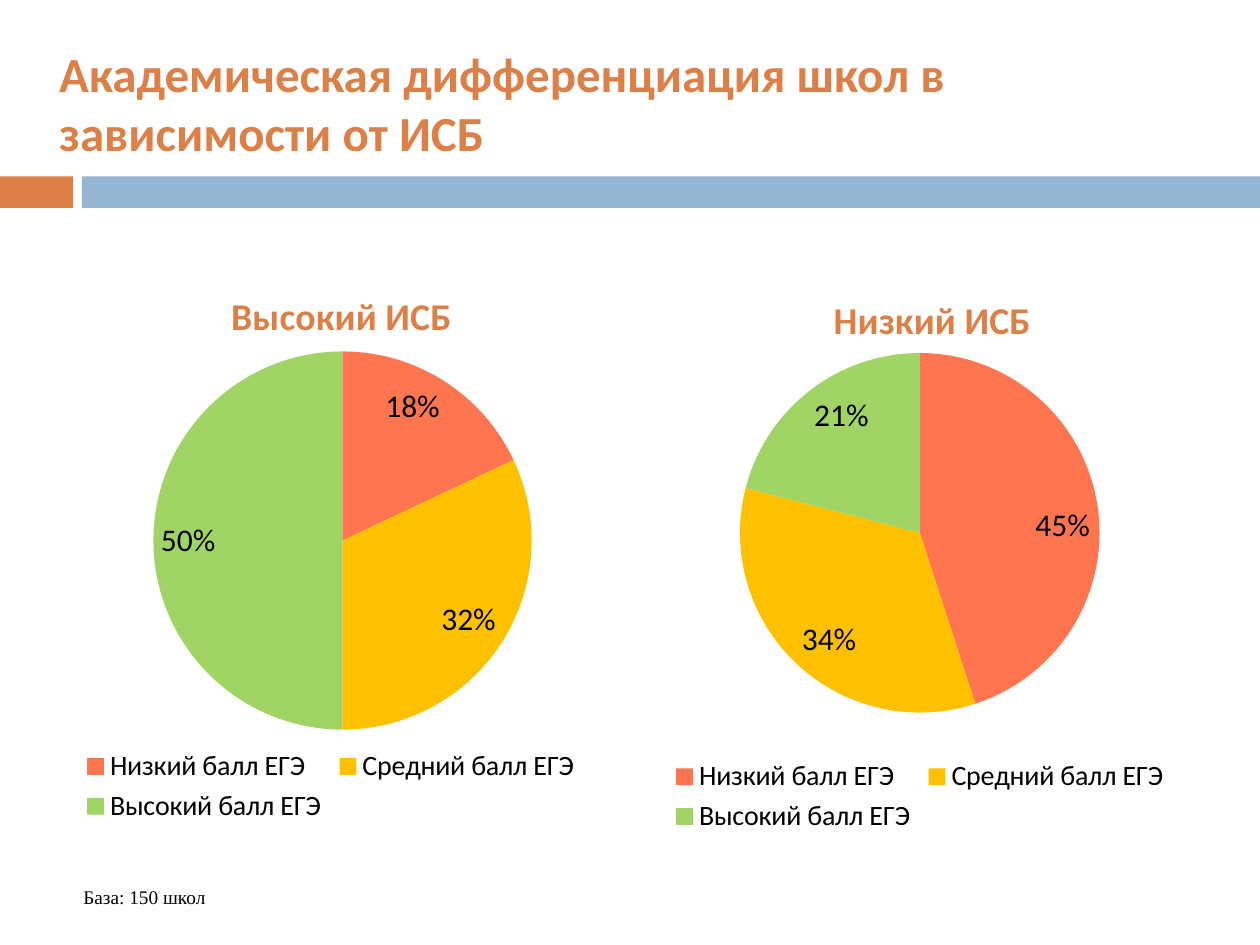
from lxml import etree
from pptx import Presentation
from pptx.chart.data import CategoryChartData
from pptx.dml.color import RGBColor
from pptx.enum.chart import XL_CHART_TYPE, XL_LABEL_POSITION, XL_LEGEND_POSITION
from pptx.enum.shapes import MSO_SHAPE
from pptx.enum.text import MSO_ANCHOR, PP_ALIGN
from pptx.oxml.ns import qn
from pptx.util import Inches, Pt

PIE = XL_CHART_TYPE.PIE
INSIDE_END = XL_LABEL_POSITION.INSIDE_END
BOTTOM = XL_LEGEND_POSITION.BOTTOM
RECTANGLE = MSO_SHAPE.RECTANGLE
MIDDLE, TOP = MSO_ANCHOR.MIDDLE, MSO_ANCHOR.TOP
LEFT, RIGHT = PP_ALIGN.LEFT, PP_ALIGN.RIGHT

COLORS = {"accent": "DD8047", "band": "94B6D2", "text": "000000",
          "low": "FF754F", "middle": "FFC000", "high": "A0D565"}
CATEGORIES = {"Низкий балл ЕГЭ": "low", "Средний балл ЕГЭ": "middle",
              "Высокий балл ЕГЭ": "high"}
PIES = [
    {"title": "Высокий ИСБ", "values": (18, 32, 50), "box": (0.28, 1.86, 4.69, 4.72),
     "title_layout": {"x": 0.32, "y": 0.08},
     "plot_layout": {"x": 0.2, "y": 0.12, "w": 0.64, "h": 0.79}},
    {"title": "Низкий ИСБ", "values": (45, 34, 21), "box": (4.84, 1.94, 4.92, 4.72),
     "title_layout": {"x": 0.35, "y": 0.07},
     "plot_layout": {"x": 0.21, "y": 0.12, "w": 0.58, "h": 0.73}},
]


def color(name):
    """Return the named colour."""
    return RGBColor.from_string(COLORS[name])


def inches(box):
    """Convert a box given in inches to lengths."""
    return [Inches(length) for length in box]


def format_font(font, size, name="Calibri", fill="text", bold=False):
    """Set the face, size, colour and weight of a font."""
    font.name, font.size, font.bold = name, Pt(size), bold
    font.color.rgb = color(fill)


def write_text(frame, text, align=LEFT, anchor=TOP, **font_format):
    """Fill a text frame with one formatted paragraph."""
    frame.word_wrap = True
    frame.vertical_anchor = anchor
    paragraph = frame.paragraphs[0]
    paragraph.alignment = align
    run = paragraph.add_run()
    run.text = text
    format_font(run.font, **font_format)


def add_bar(slide, box, fill):
    """Add a plain bar under the title."""
    bar = slide.shapes.add_shape(RECTANGLE, *inches(box))
    bar.shadow.inherit = False
    bar.fill.solid()
    bar.fill.fore_color.rgb = color(fill)
    bar.line.fill.background()


def set_layout(element, position, layout, inner=False):
    """Place a chart part by shares of the chart's size."""
    for previous in element.findall(qn("c:layout")):
        element.remove(previous)
    holder = etree.Element(qn("c:layout"))
    manual = etree.SubElement(holder, qn("c:manualLayout"))
    if inner:
        etree.SubElement(manual, qn("c:layoutTarget")).set("val", "inner")
    for key in ("x", "y"):
        etree.SubElement(manual, qn(f"c:{key}Mode")).set("val", "edge")
    for key, share in layout.items():
        etree.SubElement(manual, qn(f"c:{key}")).set("val", str(share))
    element.insert(position, holder)


def add_pie(slide, title, values, box, title_layout, plot_layout):
    """Add a titled pie chart with percentages and a legend."""
    data = CategoryChartData()
    data.categories = list(CATEGORIES)
    data.add_series("Series 1", values)
    chart = slide.shapes.add_chart(PIE, *inches(box), data).chart
    format_font(chart.font, 18)

    chart.has_title = True
    write_text(chart.chart_title.text_frame, title, size=21.6, fill="accent", bold=True)
    chart.chart_title.include_in_layout = False
    set_layout(chart.chart_title._element, 1, title_layout)
    set_layout(chart._chartSpace.chart.plotArea, 0, plot_layout, inner=True)

    chart.has_legend = True
    chart.legend.position = BOTTOM
    chart.legend.include_in_layout = False
    format_font(chart.legend.font, 16)

    plot = chart.plots[0]
    plot.vary_by_categories = True
    plot.has_data_labels = True
    labels = plot.data_labels
    labels.show_percentage, labels.show_value = True, False
    labels.number_format, labels.number_format_is_linked = "0%", False
    labels.position = INSIDE_END
    format_font(labels.font, 18)
    for index, fill in enumerate(CATEGORIES.values()):
        point = plot.series[0].points[index]
        point.format.fill.solid()
        point.format.fill.fore_color.rgb = color(fill)
        point.format.line.fill.background()


def main():
    """Build and save the slide."""
    presentation = Presentation()
    presentation.slide_width, presentation.slide_height = Inches(10), Inches(7.5)
    slide = presentation.slides.add_slide(presentation.slide_layouts[5])

    add_bar(slide, (0, 1.4, 0.58, 0.25), "accent")
    add_bar(slide, (0.65, 1.4, 9.35, 0.25), "band")

    title = slide.shapes.title
    title.left, title.top, title.width, title.height = inches((0.37, 0.52, 8.73, 0.58))
    write_text(title.text_frame, "Академическая дифференциация школ в зависимости от ИСБ",
               anchor=MIDDLE, size=28, fill="accent", bold=True)

    for pie in PIES:
        add_pie(slide, **pie)

    note = slide.shapes.add_textbox(*inches((0.43, 6.98, 1.3, 0.29)))
    write_text(note.text_frame, "База: 150 школ", align=RIGHT, size=11,
               name="Times New Roman")
    presentation.save("out.pptx")


if __name__ == "__main__":
    main()
